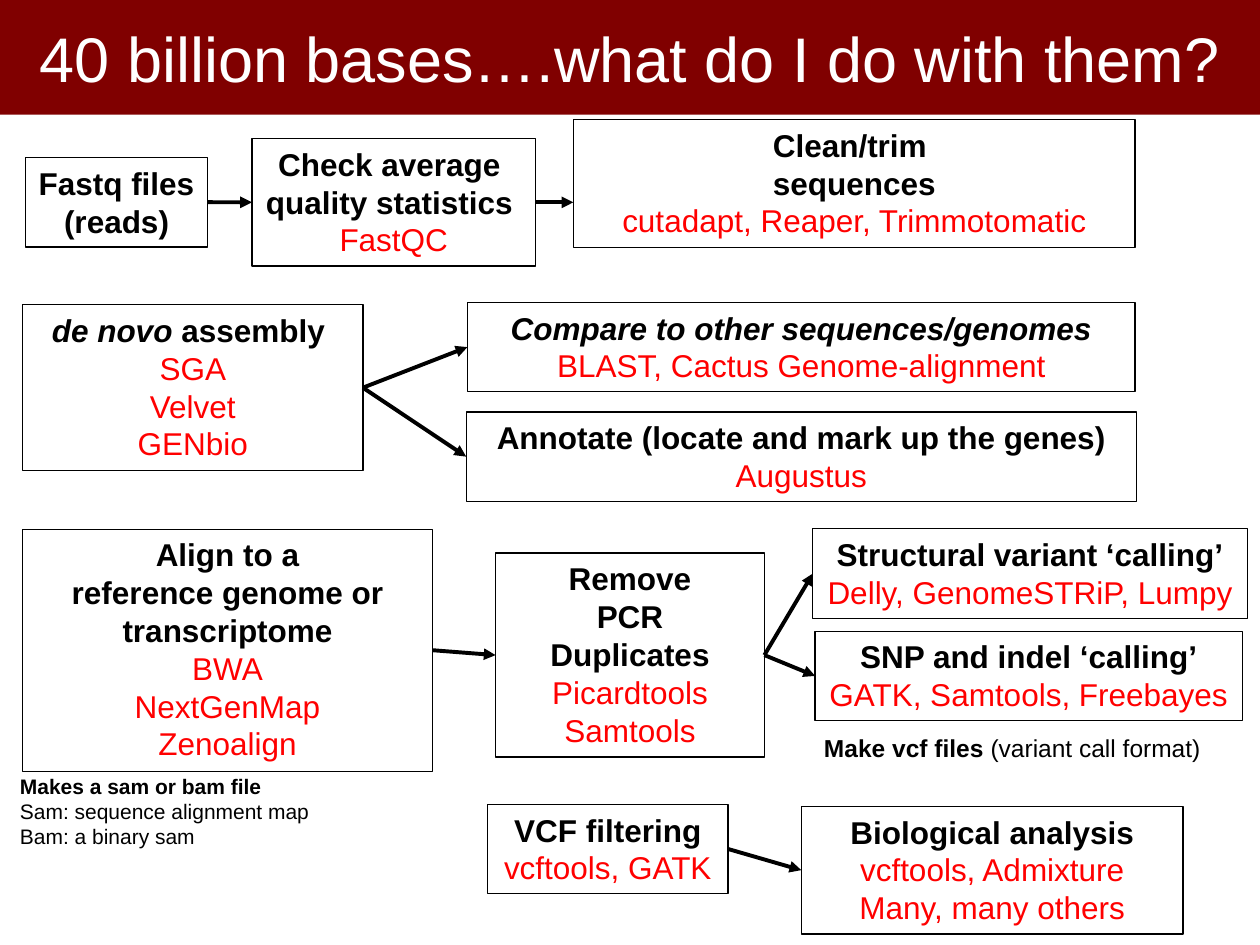
from dataclasses import dataclass

from pptx import Presentation
from pptx.dml.color import RGBColor as RGB
from pptx.enum.shapes import MSO_CONNECTOR as Link, MSO_SHAPE as Form
from pptx.enum.text import MSO_ANCHOR as Anchor, MSO_AUTO_SIZE as Fit, PP_ALIGN as Align
from pptx.oxml.ns import qn
from pptx.util import Pt
from lxml.etree import SubElement as sub

HEX = {"band": "800000", "white": "FFFFFF", "ink": "000000", "tool": "FF0000"}
STYLES = {
    "step": {"bold": True},
    "term": {"bold": True, "italic": True},
    "tool": {"bold": False},
    "plain": {"bold": False},
}
LEFT, RIGHT = 1, 3

Line = list[tuple[str, str]]


@dataclass
class Box:
    key: str
    x: float
    y: float
    w: float
    text: list[Line]
    wrap: bool = True


@dataclass
class Note:
    x: float
    y: float
    w: float
    h: float
    size: float
    align: Align
    text: list[Line]


def lines(style: str, *words: str) -> list[Line]:
    return [[(word, style)] for word in words]


def tone(name: str) -> RGB:
    return RGB.from_string(HEX[name])


def write(frame, text: list[Line], size: float, align: Align, wrap: bool = True) -> None:
    look = {"word_wrap": wrap, "vertical_anchor": Anchor.TOP,
            "auto_size": Fit.SHAPE_TO_FIT_TEXT}
    for name, value in look.items():
        setattr(frame, name, value)
    for i, line in enumerate(text):
        para = frame.add_paragraph() if i else frame.paragraphs[0]
        para.alignment = align
        for word, style in line:
            run = para.add_run()
            run.text = word
            for name, value in {"name": "Arial", "size": Pt(size), **STYLES[style]}.items():
                setattr(run.font, name, value)
            run.font.color.rgb = tone("tool" if style == "tool" else "ink")


def draw_box(slide, box: Box):
    high = 7.5 + 21.8 * len(box.text)
    shape = slide.shapes.add_shape(
        Form.RECTANGLE, Pt(box.x), Pt(box.y), Pt(box.w), Pt(high))
    shape.shadow.inherit = False
    shape.fill.background()
    shape.line.color.rgb = tone("ink")
    shape.line.width = Pt(0.75)
    write(shape.text_frame, box.text, 18, Align.CENTER, box.wrap)
    return shape


def draw_note(slide, note: Note) -> None:
    area = slide.shapes.add_textbox(Pt(note.x), Pt(note.y), Pt(note.w), Pt(note.h))
    write(area.text_frame, note.text, note.size, note.align)


def draw_arrow(slide, start, end, level: bool = False) -> None:
    """Join two boxes; a level arrow keeps the height of its start."""
    mid = start.top + start.height // 2
    arrow = slide.shapes.add_connector(
        Link.STRAIGHT, start.left + start.width, mid, end.left, mid)
    arrow.begin_connect(start, RIGHT)
    if not level:
        arrow.end_connect(end, LEFT)
    arrow.line.color.rgb = tone("ink")
    arrow.line.width = Pt(2.25)
    props = arrow._element.spPr
    sub(props.find(qn("a:ln")), qn("a:tailEnd"), type="triangle")
    sub(props, qn("a:effectLst"))


def draw_title(slide, text: str) -> None:
    title = slide.shapes.title
    place = {"left": 0, "top": 0, "width": Pt(720), "height": Pt(65.5)}
    for name, value in place.items():
        setattr(title, name, value)
    title.fill.solid()
    title.fill.fore_color.rgb = tone("band")
    frame = title.text_frame
    frame.text = text
    frame.auto_size = Fit.NONE
    frame.vertical_anchor = Anchor.MIDDLE
    para = frame.paragraphs[0]
    para.alignment = Align.CENTER
    font = para.runs[0].font
    for name, value in {"name": "Arial", "size": Pt(36)}.items():
        setattr(font, name, value)
    font.color.rgb = tone("white")


BOXES = [
    Box("reads", 14.4, 90, 104.4, lines("step", "Fastq files", "(reads)"), False),
    Box("check", 144, 79.2, 162,
        lines("step", "Check average ", "quality statistics ") + lines("tool", "FastQC"),
        False),
    Box("clean", 327.6, 68.4, 321.1,
        lines("step", "Clean/trim ", "sequences")
        + lines("tool", "cutadapt, Reaper, Trimmotomatic")),
    Box("novo", 13, 174.2, 194.4,
        [[("de novo ", "term"), ("assembly ", "step")]]
        + lines("tool", "SGA", "Velvet", "GENbio")),
    Box("compare", 267.1, 172.8, 381.6,
        lines("term", "Compare to other sequences/genomes")
        + lines("tool", "BLAST, Cactus Genome-alignment")),
    Box("genes", 266.4, 235.4, 383,
        lines("step", "Annotate (locate and mark up the genes)")
        + lines("tool", "Augustus")),
    Box("align", 13, 302.4, 234,
        lines("step", "Align to a", "reference genome or", "transcriptome")
        + lines("tool", "BWA", "NextGenMap", "Zenoalign")),
    Box("remove", 283.2, 316.1, 153.6,
        lines("step", "Remove", "PCR", "Duplicates")
        + lines("tool", "Picardtools", "Samtools")),
    Box("struct", 464.5, 302.2, 248.2,
        lines("step", "Structural variant ‘calling’")
        + lines("tool", "Delly, GenomeSTRiP, Lumpy"), False),
    Box("snp", 465.8, 360.7, 244.1,
        lines("step", "SNP and indel ‘calling’")
        + lines("tool", "GATK, Samtools, Freebayes"), False),
    Box("filter", 278.6, 459.6, 137.5,
        lines("step", "VCF filtering") + lines("tool", "vcftools, GATK"), False),
    Box("study", 457.9, 460.8, 218.2,
        lines("step", "Biological analysis")
        + lines("tool", "vcftools, Admixture", "Many, many others")),
]

NOTES = [
    Note(4.3, 438.5, 234, 51.1, 12, Align.LEFT,
         lines("step", "Makes a sam or bam file")
         + lines("plain", "Sam: sequence alignment map", "Bam: a binary sam")),
    Note(457.9, 415.4, 241.2, 24.5, 14, Align.CENTER,
         [[("Make vcf files", "step"), (" (variant call format)", "plain")]]),
]

ARROWS = [
    ("reads", "check"), ("check", "clean"),
    ("novo", "compare"), ("novo", "genes"),
    ("align", "remove"), ("remove", "struct"), ("remove", "snp"),
    ("filter", "study"),
]


def main() -> None:
    deck = Presentation()
    deck.slide_width, deck.slide_height = Pt(720), Pt(540)
    slide = deck.slides.add_slide(deck.slide_layouts[5])
    draw_title(slide, "40 billion bases….what do I do with them?")
    shapes = {box.key: draw_box(slide, box) for box in BOXES}
    for note in NOTES:
        draw_note(slide, note)
    for start, end in ARROWS:
        draw_arrow(slide, shapes[start], shapes[end], level=end == "clean")
    deck.save("out.pptx")


if __name__ == "__main__":
    main()
